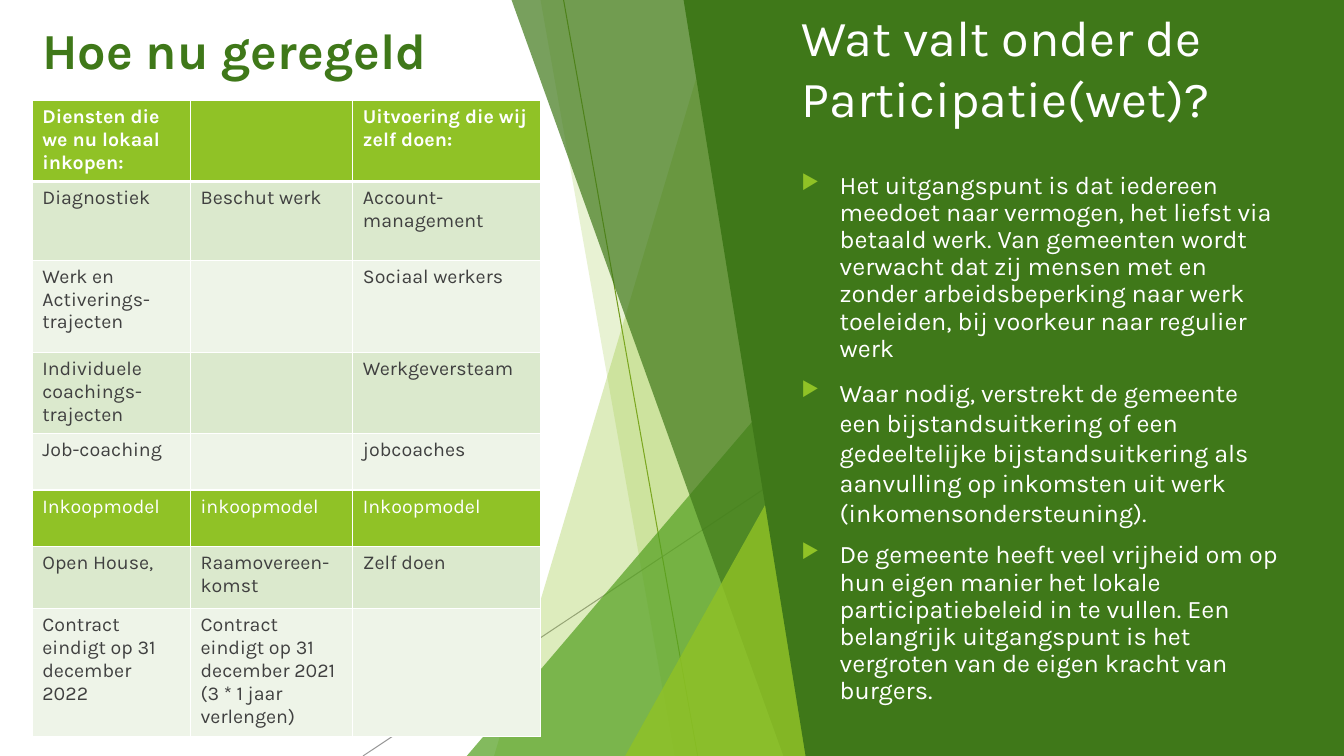
from lxml import etree
from pptx import Presentation
from pptx.dml.color import RGBColor
from pptx.enum.shapes import MSO_CONNECTOR, MSO_SHAPE
from pptx.enum.text import MSO_ANCHOR, PP_ALIGN
from pptx.oxml.ns import qn
from pptx.util import Inches, Pt

COLORS = {
    "dark": "3F7819", "green": "54A021", "lime": "90C226",
    "line_green": "6C921D", "line_grey": "808080",
    "band_dark": "DBE9CD", "band_light": "EEF4E8",
    "text": "404040", "white": "FFFFFF",
}
FONT = "Karla"
TABLE_ROWS = [
    ["Diensten die we nu lokaal inkopen:", "", "Uitvoering die wij zelf doen:"],
    ["Diagnostiek", "Beschut werk", "Account-management"],
    ["Werk en\nActiverings-trajecten", "", "Sociaal werkers"],
    ["Individuele coachings-trajecten", "", "Werkgeversteam"],
    ["Job-coaching", "", "jobcoaches"],
    ["Inkoopmodel", "inkoopmodel", "Inkoopmodel"],
    ["Open House,", "Raamovereen-komst", "Zelf doen"],
    ["Contract eindigt op 31 december 2022",
     "Contract eindigt op 31 december 2021 (3 * 1 jaar verlengen)", ""],
]
COLUMN_WIDTHS = [1.57, 1.61, 1.86]
ROW_HEIGHTS = [0.78, 0.78, 0.92, 0.78, 0.56, 0.56, 0.62, 1.24]
HEADER_ROWS = (0, 5)
BULLETS = [
    ("Het uitgangspunt is dat iedereen meedoet naar vermogen, het liefst via "
     "betaald werk. Van gemeenten wordt verwacht dat zij mensen met en zonder "
     "arbeidsbeperking naar werk toeleiden, bij voorkeur naar regulier werk", 0.9),
    ("Waar nodig, verstrekt de gemeente een bijstandsuitkering of een "
     "gedeeltelijke bijstandsuitkering als aanvulling op inkomsten uit werk "
     "(inkomensondersteuning).", 1.0),
    ("De gemeente heeft veel vrijheid om op hun eigen manier het lokale "
     "participatiebeleid in te vullen. Een belangrijk uitgangspunt is het "
     "vergroten van de eigen kracht van burgers.", 0.9),
]


def rgb(name):
    return RGBColor.from_string(COLORS[name])


def add_element(parent, tag, **attributes):
    element = etree.SubElement(parent, qn(tag))
    for key, value in attributes.items():
        element.set(key, str(value))
    return element


def set_alpha(shape_properties, percent):
    for color in shape_properties.iter(qn("a:srgbClr")):
        add_element(color, "a:alpha", val=percent * 1000)


def style_font(paragraph, size, color, bold=False):
    values = {"name": FONT, "size": Pt(size), "bold": bold}
    for key, value in values.items():
        setattr(paragraph.font, key, value)
    paragraph.font.color.rgb = rgb(color)


def paint(shape, color, percent=100):
    shape.shadow.inherit = False
    shape.fill.solid()
    shape.fill.fore_color.rgb = rgb(color)
    if percent < 100:
        set_alpha(shape.element.spPr, percent)
    shape.line.fill.background()


def add_polygon(slide, points, color, percent=100):
    corners = [(Inches(x), Inches(y)) for x, y in points]
    builder = slide.shapes.build_freeform(*corners[0])
    builder.add_line_segments(corners[1:], close=True)
    paint(builder.convert_to_shape(), color, percent)


def add_thin_line(slide, start, end, color, percent=100):
    ends = [Inches(value) for value in (*start, *end)]
    line = slide.shapes.add_connector(MSO_CONNECTOR.STRAIGHT, *ends)
    line.line.width = Pt(0.75)
    line.line.color.rgb = rgb(color)
    if percent < 100:
        set_alpha(line.element.spPr, percent)
    add_element(line.element.spPr, "a:effectLst")


def add_facets(slide, left, right, top, bottom):
    """Draw the translucent facets, all ending at the right edge."""
    def band(top_offset, bottom_offset, color, percent):
        points = [(left + top_offset, top), (right, top),
                  (right, bottom), (left + bottom_offset, bottom)]
        add_polygon(slide, points, color, percent)

    def corner(offset, height, color, percent):
        box = (left + offset, bottom - height, right - left - offset, height)
        triangle = slide.shapes.add_shape(
            MSO_SHAPE.ISOSCELES_TRIANGLE, *map(Inches, box))
        triangle.adjustments[0] = 1
        paint(triangle, color, percent)

    add_thin_line(slide, (left + 0.96, 0), (left + 2.29, bottom), "line_green")
    add_thin_line(slide, (left + 4.18, 4.03), (left - 1.03, bottom), "line_grey", 80)
    band(2.51, 0.27, "lime", 30)
    band(0.73, 2.06, "lime", 20)
    corner(0, 4.17, "green", 72)
    band(0.44, 3.14, "dark", 70)
    corner(1.57, 3.57, "lime", 80)


def add_title(slide, left, top, width, height):
    title = slide.shapes.title
    box = {"left": left, "top": top, "width": width, "height": height}
    for key, value in box.items():
        setattr(title, key, Inches(value))
    frame = title.text_frame
    frame.text = "Wat valt onder de Participatie(wet)?"
    frame.word_wrap = True
    frame.vertical_anchor = MSO_ANCHOR.MIDDLE
    frame.paragraphs[0].alignment = PP_ALIGN.LEFT
    style_font(frame.paragraphs[0], 36, "white")


def add_bullets(slide, left, top, width, height):
    box = slide.shapes.add_textbox(*map(Inches, (left, top, width, height)))
    frame = box.text_frame
    frame.word_wrap = True
    for index, (text, spacing) in enumerate(BULLETS):
        paragraph = frame.add_paragraph() if index else frame.paragraphs[0]
        paragraph.text = text
        paragraph.line_spacing = spacing
        paragraph.space_before = Pt(10)
        style_font(paragraph, 18, "white")
        properties = paragraph._p.get_or_add_pPr()
        properties.set("marL", str(Inches(0.38)))
        properties.set("indent", str(-Inches(0.38)))
        # The schema wants bullet settings after spacing and before run defaults.
        defaults = properties.find(qn("a:defRPr"))
        bullet_color = add_element(properties, "a:buClr")
        add_element(bullet_color, "a:srgbClr", val=COLORS["lime"])
        add_element(properties, "a:buSzPct", val=80000)
        add_element(properties, "a:buChar", char="▶")
        if defaults is not None:
            properties.append(defaults)


def add_cell_borders(cell, bottom_width):
    properties = cell._tc.get_or_add_tcPr()
    for side, width in (("L", 1), ("R", 1), ("T", 1), ("B", bottom_width)):
        border = add_element(properties, f"a:ln{side}", w=Pt(width))
        fill = add_element(border, "a:solidFill")
        add_element(fill, "a:srgbClr", val=COLORS["white"])


def add_services_table(slide, left, top):
    size = (sum(COLUMN_WIDTHS), sum(ROW_HEIGHTS))
    table = slide.shapes.add_table(
        len(ROW_HEIGHTS), len(COLUMN_WIDTHS),
        *map(Inches, (left, top, *size))).table
    for column, width in zip(table.columns, COLUMN_WIDTHS):
        column.width = Inches(width)
    for row_index, texts in enumerate(TABLE_ROWS):
        table.rows[row_index].height = Inches(ROW_HEIGHTS[row_index])
        header = row_index in HEADER_ROWS
        band = "band_dark" if row_index % 2 or row_index == 6 else "band_light"
        if row_index == 7:
            band = "band_light"
        for column_index, text in enumerate(texts):
            cell = table.cell(row_index, column_index)
            cell.text = text
            add_cell_borders(cell, 1 if row_index else 3)
            cell.fill.solid()
            cell.fill.fore_color.rgb = rgb("lime" if header else band)
            for paragraph in cell.text_frame.paragraphs:
                style_font(paragraph, 14, "white" if header else "text", row_index == 0)


def add_table_heading(slide, left, top, width, height):
    box = slide.shapes.add_textbox(*map(Inches, (left, top, width, height)))
    box.text_frame.text = "Hoe nu geregeld"
    style_font(box.text_frame.paragraphs[0], 36, "dark", True)


def main():
    presentation = Presentation()
    presentation.slide_width = Inches(13.33)
    presentation.slide_height = Inches(7.5)
    slide = presentation.slides.add_slide(presentation.slide_layouts[5])
    add_facets(slide, 4.63, 8.19, -0.01, 7.5)
    add_polygon(slide, [(6.78, 0), (13.33, 0), (13.33, 7.5), (7.99, 7.5)], "dark")
    title = slide.shapes.title.element
    title.getparent().append(title)
    add_title(slide, 7.85, -0.1, 4.94, 1.53)
    add_bullets(slide, 7.85, 1.66, 4.94, 5.47)
    add_services_table(slide, 0.32, 1)
    add_table_heading(slide, 0.32, 0.14, 4.06, 0.71)
    presentation.save("out.pptx")


if __name__ == "__main__":
    main()
